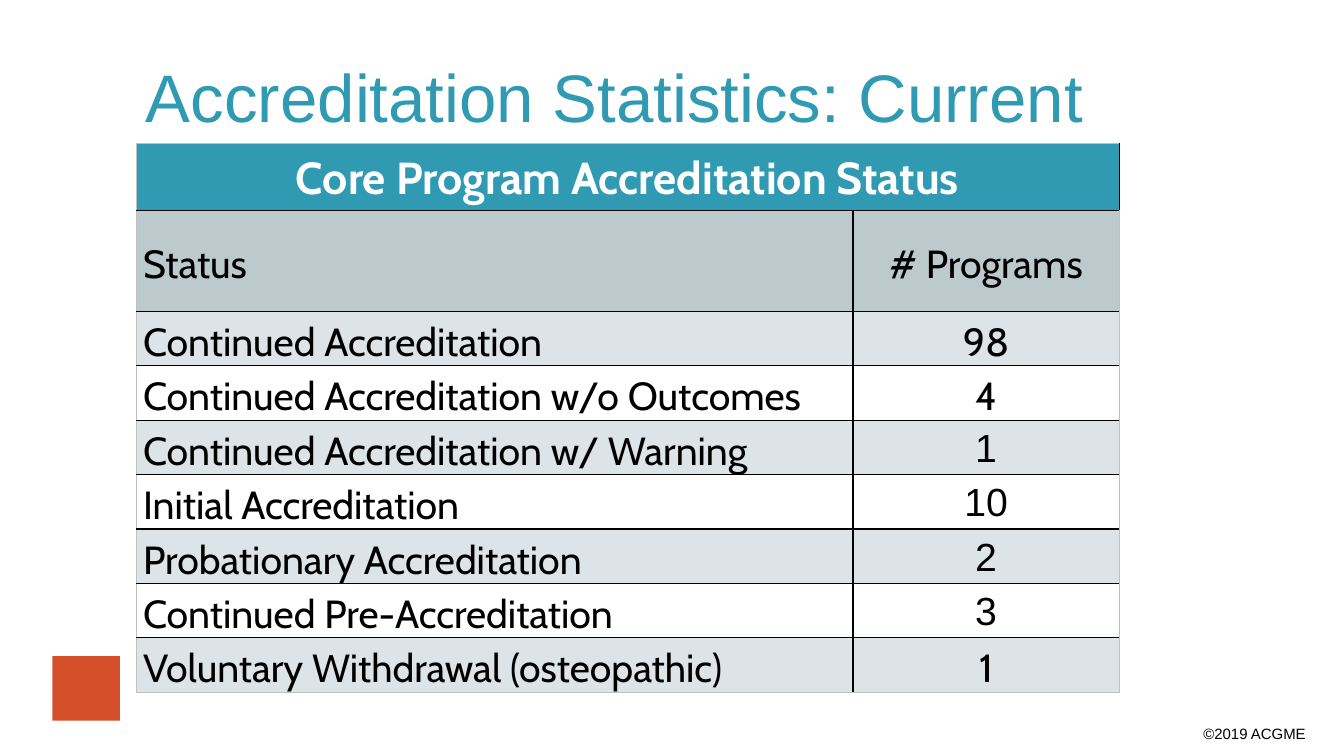
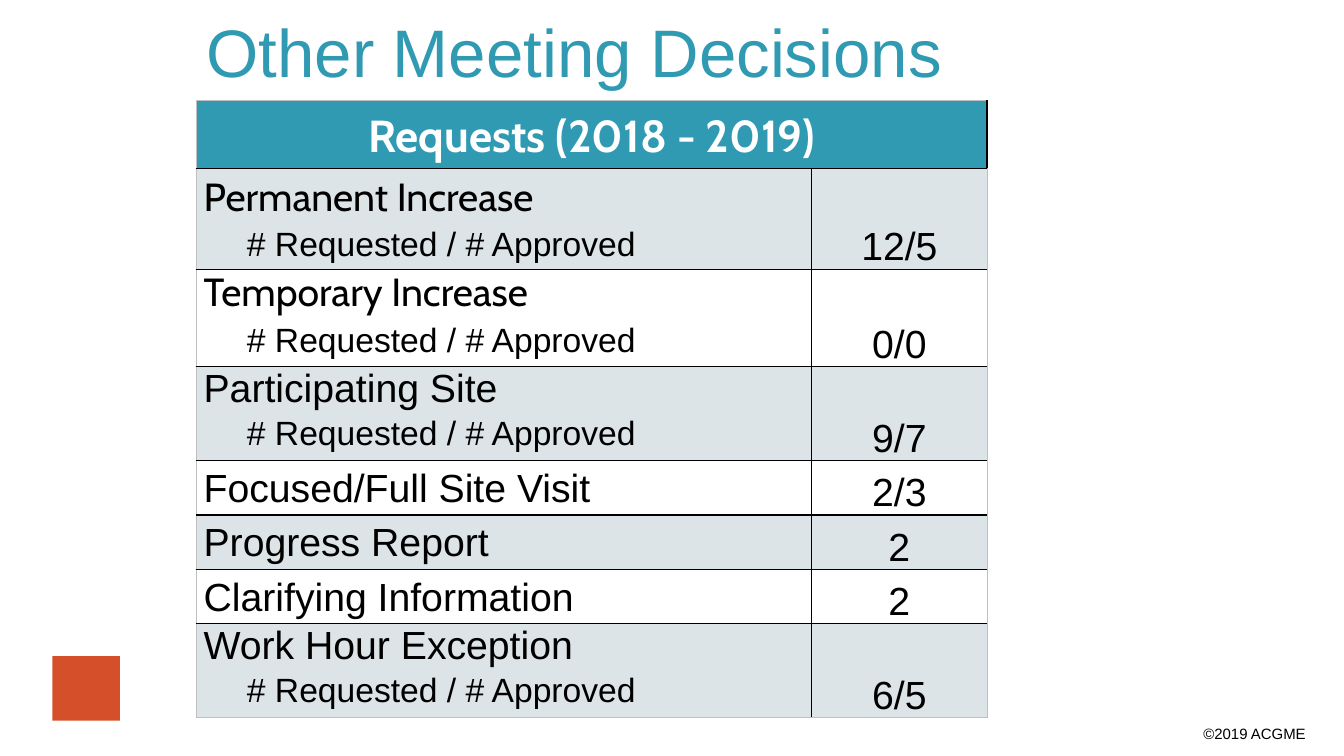
from dataclasses import dataclass

from lxml import etree
from pptx import Presentation
from pptx.dml.color import RGBColor
from pptx.enum.shapes import MSO_SHAPE
from pptx.enum.text import MSO_ANCHOR, PP_ALIGN
from pptx.oxml.ns import qn
from pptx.util import Inches, Pt

LEFT, CENTER, RIGHT = PP_ALIGN.LEFT, PP_ALIGN.CENTER, PP_ALIGN.RIGHT
TOP, MIDDLE, BOTTOM = MSO_ANCHOR.TOP, MSO_ANCHOR.MIDDLE, MSO_ANCHOR.BOTTOM
RECTANGLE = MSO_SHAPE.RECTANGLE

SANS, DISPLAY = "Arial", "Cabin"
TEAL, ORANGE, BLACK, WHITE = "309AB3", "D44F2A", "000000", "FFFFFF"
SLATE, BAND, EDGE = "BCCACE", "DDE4E7", "BFBFBF"
REQUESTED = "# Requested / # Approved"


def color(hex_value):
    return RGBColor.from_string(hex_value)


@dataclass
class Row:
    """One table row below the header: a label, its value and their style."""
    label: str
    value: str
    height: float = 0.54
    label_font: str = DISPLAY
    value_font: str = SANS
    detail: str = ""
    label_anchor: MSO_ANCHOR = TOP
    value_anchor: MSO_ANCHOR = TOP
    fill: str = ""


class SlideBuilder:
    header_height = 0.67

    def __init__(self, deck):
        self.deck = deck
        self.slide = None

    def new_slide(self, title, left, top):
        self.slide = self.deck.slides.add_slide(self.deck.slide_layouts[6])
        self.accent_square()
        self.text(title, (left, top, 11.03, 1.25), 48, TEAL, LEFT, MIDDLE)
        self.text("©2019 ACGME", (11.82, 7.14, 1.23, 0.28), 10.7, BLACK, RIGHT, TOP)

    def accent_square(self):
        square = self.slide.shapes.add_shape(
            RECTANGLE, Inches(0.52), Inches(6.51), Inches(0.67), Inches(0.64))
        square.shadow.inherit = False
        square.fill.solid()
        square.fill.fore_color.rgb = color(ORANGE)
        square.line.fill.background()

    def text(self, words, place, size, hex_value, align, anchor):
        box = self.slide.shapes.add_textbox(*map(Inches, place))
        box.text_frame.word_wrap = True
        box.text_frame.vertical_anchor = anchor
        self.add_words(box.text_frame.paragraphs[0], words, {"size": Pt(size)},
                       hex_value, {"alignment": align})

    def add_words(self, para, words, font, hex_value=BLACK, layout=None):
        span = para.add_run()
        span.text = words
        span.font.color.rgb = color(hex_value)
        for name, value in {"name": SANS, "bold": False, **font}.items():
            setattr(span.font, name, value)
        for name, value in (layout or {}).items():
            setattr(para, name, value)

    def cell(self, cell, words, font, fill, align=LEFT, anchor=TOP,
             hex_value=BLACK, spacing=1.15):
        formats = {"margin_left": Inches(0.07), "margin_right": Inches(0.07),
                   "margin_top": 0, "margin_bottom": 0, "vertical_anchor": anchor}
        for name, value in formats.items():
            setattr(cell, name, value)
        cell.fill.solid()
        cell.fill.fore_color.rgb = color(fill)
        self.add_words(cell.text_frame.paragraphs[0], words, font, hex_value,
                       {"alignment": align, "line_spacing": spacing})

    def detail_line(self, cell, words):
        para = cell.text_frame.add_paragraph()
        para._p.get_or_add_pPr().set("marL", str(Inches(0.43)))
        self.add_words(para, words, {"size": Pt(24)},
                       layout={"alignment": LEFT, "space_before": Pt(3.6)})

    def borders(self, table):
        last_row, last_column = len(table.rows) - 1, len(table.columns) - 1
        for r in range(last_row + 1):
            for c in range(last_column + 1):
                outer = {"lnL": c == 0, "lnR": c == last_column,
                         "lnT": r == 0, "lnB": r == last_row}
                properties = table.cell(r, c)._tc.get_or_add_tcPr()
                for position, (tag, is_outer) in enumerate(outer.items()):
                    line = etree.Element(qn(f"a:{tag}"),
                                         w=str(Pt(0.5 if is_outer else 1)))
                    paint = etree.SubElement(line, qn("a:solidFill"))
                    etree.SubElement(paint, qn("a:srgbClr"),
                                     val=EDGE if is_outer else BLACK)
                    properties.insert(position, line)

    def table(self, heading, left, top, widths, rows):
        heights = [self.header_height] + [row.height for row in rows]
        frame = self.slide.shapes.add_table(
            len(heights), len(widths), Inches(left), Inches(top),
            Inches(sum(widths)), Inches(sum(heights)))
        table = frame.table
        table.first_row = table.horz_banding = False
        for column, width in zip(table.columns, widths):
            column.width = Inches(width)
        for table_row, height in zip(table.rows, heights):
            table_row.height = Inches(height)

        # Header across both columns
        table.cell(0, 0).merge(table.cell(0, 1))
        self.cell(table.cell(0, 0), heading,
                  {"name": DISPLAY, "size": Pt(32), "bold": True},
                  TEAL, CENTER, hex_value=WHITE)

        # Body rows, banded alternately after any row with its own fill
        banded = True
        for index, row in enumerate(rows, 1):
            fill = row.fill or (BAND if banded else WHITE)
            banded = banded if row.fill else not banded
            label, value = table.cell(index, 0), table.cell(index, 1)
            self.cell(label, row.label, {"name": row.label_font, "size": Pt(28)},
                      fill, anchor=row.label_anchor,
                      spacing=1.0 if row.detail else 1.15)
            if row.detail:
                self.detail_line(label, row.detail)
            self.cell(value, row.value, {"name": row.value_font, "size": Pt(28)},
                      fill, CENTER, row.value_anchor)
        self.borders(table)


def main():
    deck = Presentation()
    deck.slide_width, deck.slide_height = Inches(13.33), Inches(7.5)
    builder = SlideBuilder(deck)

    # Accreditation status
    builder.new_slide("Accreditation Statistics: Current", 1.35, 0.32)
    builder.table("Core Program Accreditation Status", 1.35, 1.42, (7.11, 2.64), [
        Row("Status", "# Programs", 1, value_font=DISPLAY, fill=SLATE,
            label_anchor=MIDDLE, value_anchor=MIDDLE),
        Row("Continued Accreditation", "98", value_font=DISPLAY),
        Row("Continued Accreditation w/o Outcomes", "4", value_font=DISPLAY),
        Row("Continued Accreditation w/ Warning", "1"),
        Row("Initial Accreditation", "10"),
        Row("Probationary Accreditation", "2"),
        Row("Continued Pre-Accreditation", "3"),
        Row("Voluntary Withdrawal (osteopathic)", "1", value_font=DISPLAY),
    ])

    # Requests
    builder.new_slide("Other Meeting Decisions", 1.95, -0.12)
    requests = [
        Row("Permanent Increase", "12/5", 1, detail=REQUESTED, label_anchor=MIDDLE),
        Row("Temporary Increase", "0/0", 0.97, detail=REQUESTED),
        Row("Participating Site", "9/7", 0.93, SANS, detail=REQUESTED),
        Row("Focused/Full Site Visit", "2/3", label_font=SANS),
        Row("Progress Report", "2", label_font=SANS),
        Row("Clarifying Information", "2", label_font=SANS),
        Row("Work Hour Exception", "6/5", 0.93, SANS, detail=REQUESTED),
    ]
    for row in requests:
        row.value_anchor = BOTTOM
    builder.table("Requests (2018 - 2019)", 1.95, 1, (6.1, 1.74), requests)

    deck.save("out.pptx")


if __name__ == "__main__":
    main()
